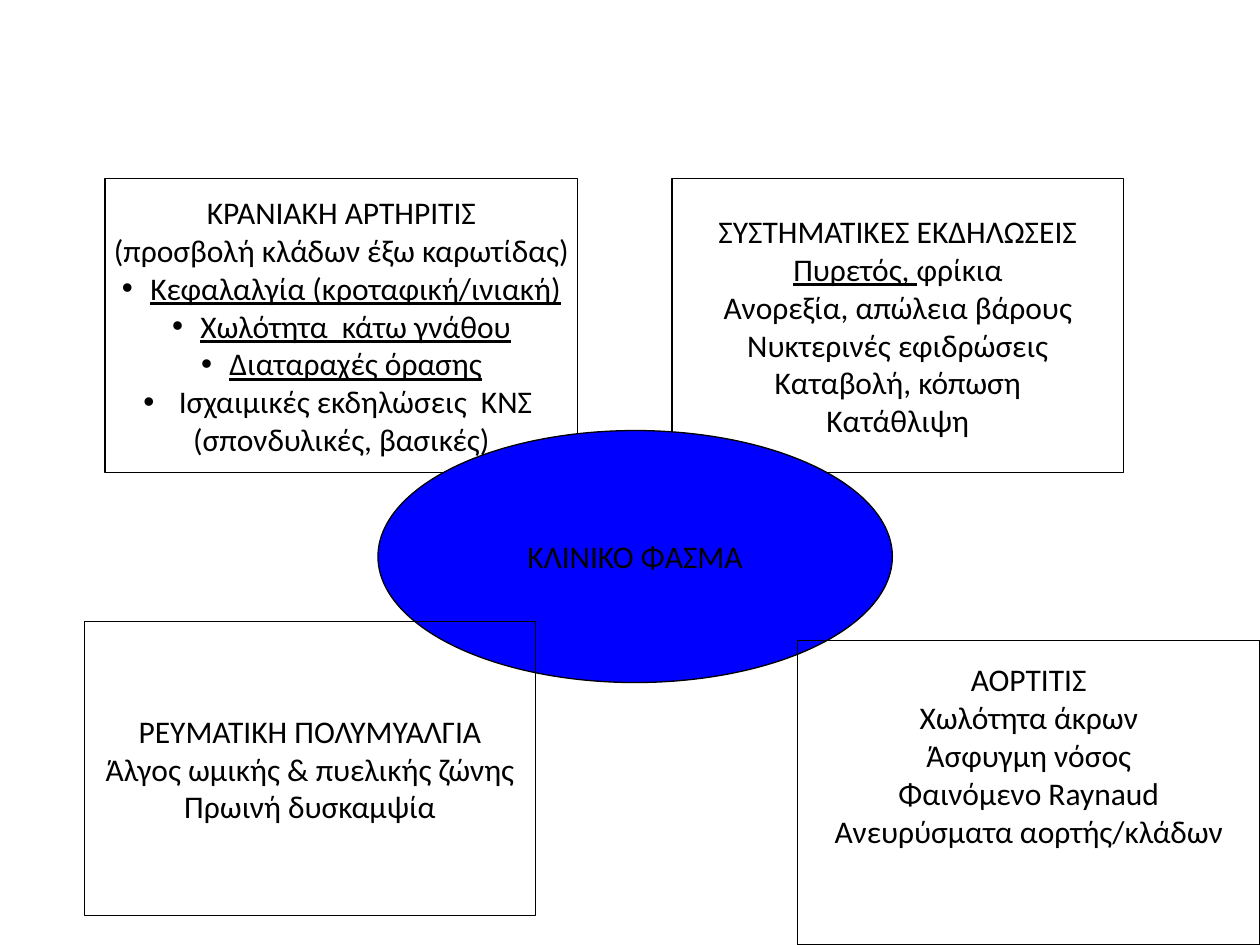
from lxml import etree
from pptx import Presentation
from pptx.dml.color import RGBColor
from pptx.enum.shapes import MSO_SHAPE
from pptx.enum.text import MSO_ANCHOR, PP_ALIGN
from pptx.oxml.ns import qn
from pptx.util import Cm, Pt

RECT, OVAL = MSO_SHAPE.RECTANGLE, MSO_SHAPE.OVAL
MIDDLE, CENTER = MSO_ANCHOR.MIDDLE, PP_ALIGN.CENTER


def color(value):
    """Turn a hex string into a colour."""
    return RGBColor.from_string(value)


class Diagram:
    """Hold the style and the slide that shapes are drawn on."""

    font, size, ink, line_width, hanging = "Calibri", 18, "000000", 0.75, 0.57

    def __init__(self, slide):
        """Keep the current slide."""
        self.slide = slide

    def shape(self, kind, box, paragraphs, fill=None, bottom=0.13):
        """Draw an outlined shape with centred text."""
        sp = self.slide.shapes.add_shape(kind, *(Cm(v) for v in box))
        sp.shadow.inherit = False
        if fill:
            sp.fill.solid()
            sp.fill.fore_color.rgb = color(fill)
        else:
            sp.fill.background()
        sp.line.color.rgb = color(self.ink)
        sp.line.width = Pt(self.line_width)
        tf = sp.text_frame
        tf.word_wrap = False
        tf.vertical_anchor = MIDDLE
        tf.margin_bottom = Cm(bottom)
        for i, content in enumerate(paragraphs):
            p = tf.add_paragraph() if i else tf.paragraphs[0]
            self.paragraph(p, content)

    def paragraph(self, p, content):
        """Fill a paragraph from a string or a (bulleted, runs) pair."""
        bulleted, runs = (False, [(content, False)]) if isinstance(content, str) else content
        p.alignment = CENTER
        if bulleted:
            self.bullet(p)
        for text, underlined in runs:
            r = p.add_run()
            r.text = text
            r.font.name = self.font
            r.font.size = Pt(self.size)
            r.font.color.rgb = color(self.ink)
            if underlined:
                r.font.underline = True

    def bullet(self, p):
        """Give a paragraph a round bullet with a hanging indent."""
        pPr = p._p.get_or_add_pPr()
        pPr.set("marL", str(Cm(self.hanging)))
        pPr.set("indent", str(-Cm(self.hanging)))
        etree.SubElement(pPr, qn("a:buFont")).set("typeface", "Arial")
        etree.SubElement(pPr, qn("a:buChar")).set("char", "•")


def main():
    """Build the slide on the clinical spectrum."""
    prs = Presentation()
    prs.slide_width, prs.slide_height = Cm(25.4), Cm(19.05)
    s = prs.slides.add_slide(prs.slide_layouts[6])
    d = Diagram(s)

    d.shape(RECT, (2.12, 3.6, 9.53, 5.93), [
        "ΚΡΑΝΙΑΚΗ ΑΡΤΗΡΙΤΙΣ",
        "(προσβολή κλάδων έξω καρωτίδας)",
        (True, [("Κεφαλαλγία (κροταφική/ινιακή)", True)]),
        (True, [("Χωλότητα  κάτω γνάθου", True)]),
        (True, [("Διαταραχές όρασης", True)]),
        (True, [(" Ισχαιμικές εκδηλώσεις  ΚΝΣ ", False)]),
        "(σπονδυλικές, βασικές)",
    ])
    d.shape(RECT, (13.55, 3.6, 9.1, 5.93), [
        "ΣΥΣΤΗΜΑΤΙΚΕΣ ΕΚΔΗΛΩΣΕΙΣ",
        (False, [("Πυρετός, ", True), ("φρίκια", False)]),
        "Ανορεξία, απώλεια βάρους",
        "Νυκτερινές εφιδρώσεις",
        "Καταβολή, κόπωση",
        "Κατάθλιψη",
    ])
    d.shape(OVAL, (7.62, 8.68, 10.37, 5.08), ["ΚΛΙΝΙΚΟ ΦΑΣΜΑ"], fill="0000FF")
    d.shape(RECT, (1.7, 12.53, 9.1, 5.93), [
        "ΡΕΥΜΑΤΙΚΗ ΠΟΛΥΜΥΑΛΓΙΑ",
        "Άλγος ωμικής & πυελικής ζώνης",
        "Πρωινή δυσκαμψία",
    ])
    d.shape(RECT, (16.08, 12.91, 9.32, 6.14), [
        "ΑΟΡΤΙΤΙΣ",
        "Χωλότητα άκρων",
        "Άσφυγμη νόσος",
        "Φαινόμενο Raynaud",
        "Ανευρύσματα αορτής/κλάδων",
    ], bottom=1.65)
    prs.save("out.pptx")


if __name__ == "__main__":
    main()
